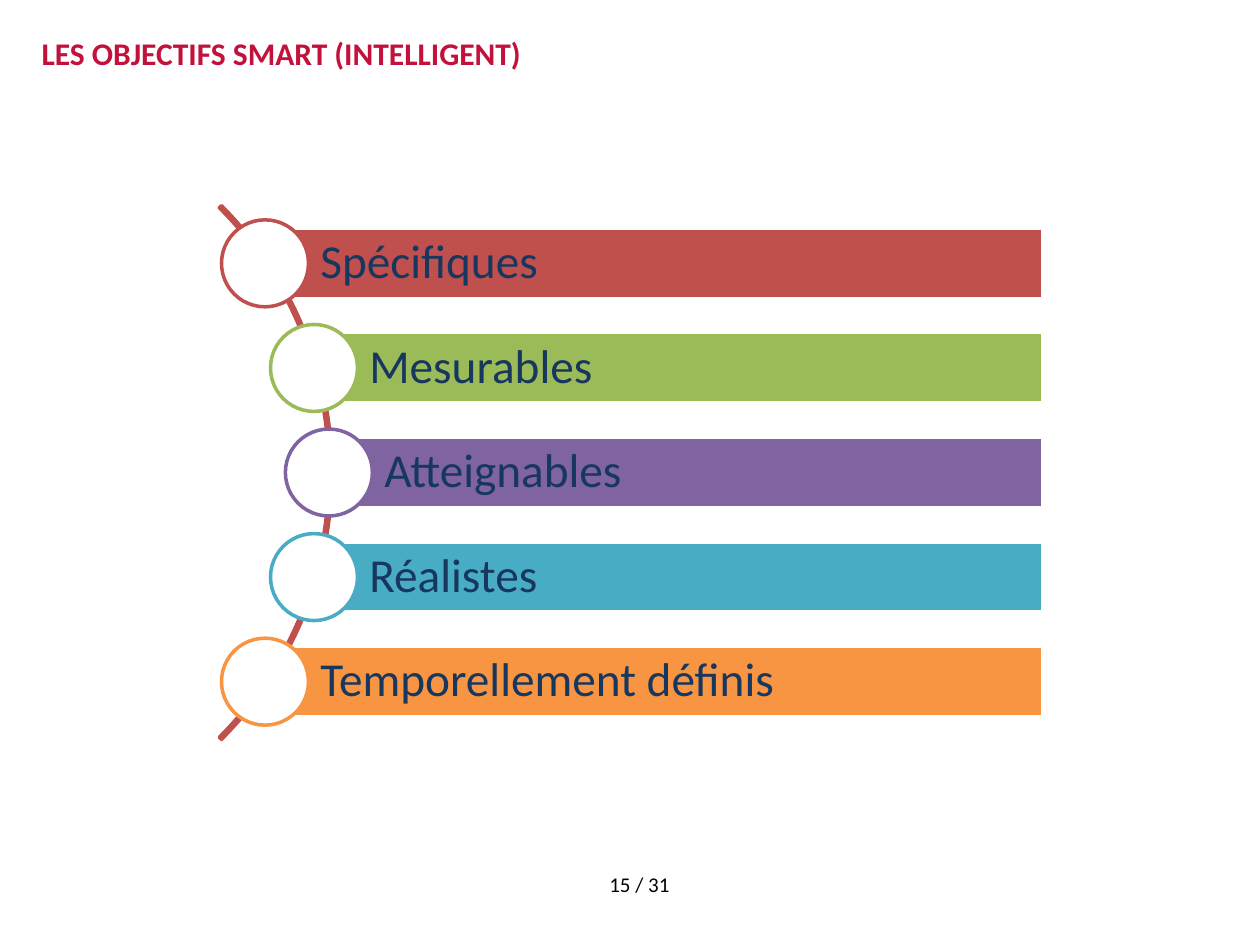
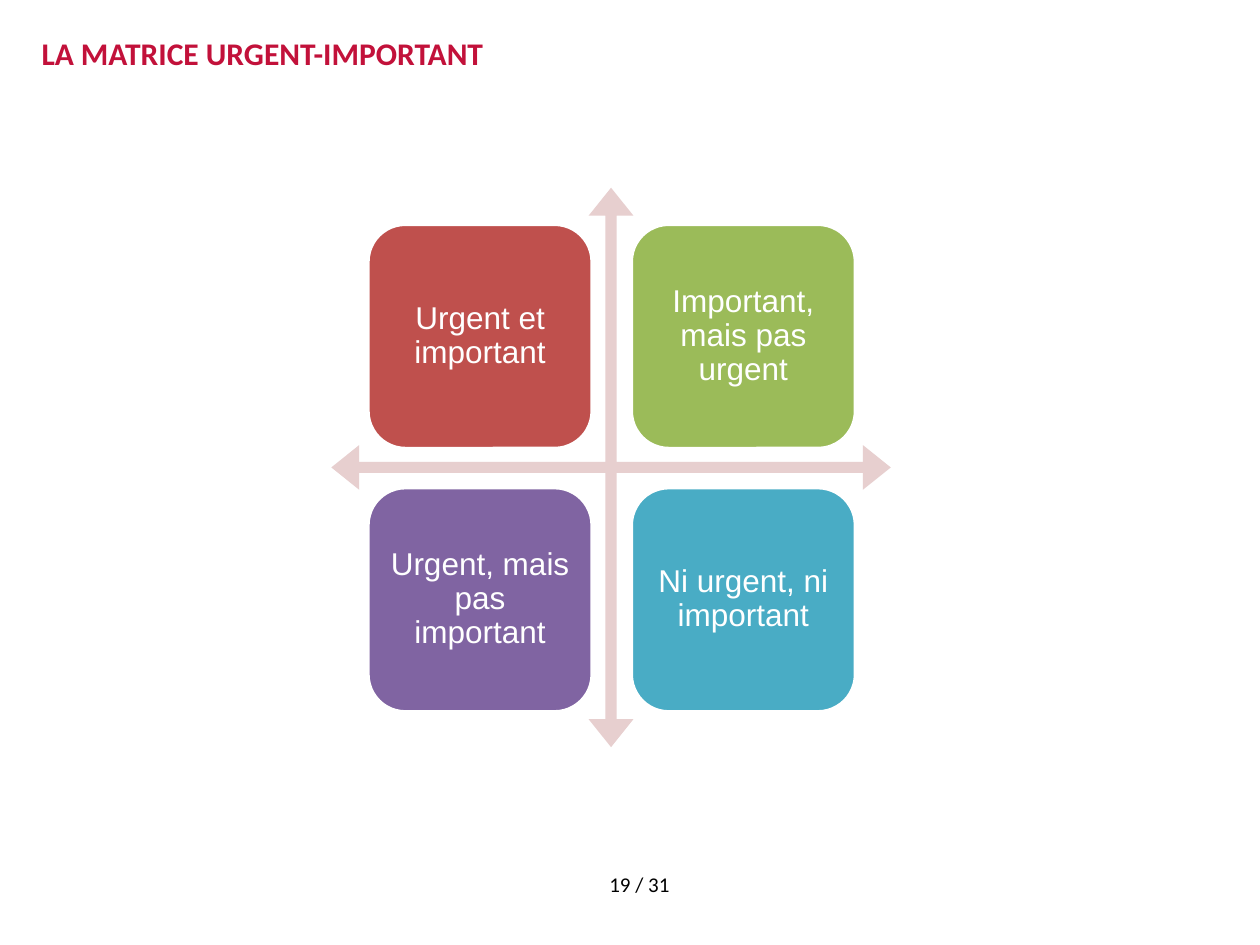
from dataclasses import dataclass
from itertools import product
from math import sqrt

from pptx import Presentation
from pptx import util as u
from pptx.dml.color import RGBColor
from pptx.enum import shapes, text

# Content
PAGE_COUNT = 31
SMART = {
    "title": "LES OBJECTIFS SMART (INTELLIGENT)",
    "page": 15,
    "goals": ["Spécifiques", "Mesurables", "Atteignables", "Réalistes",
              "Temporellement définis"],
}
MATRIX = {
    "title": "LA MATRICE URGENT-IMPORTANT",
    "page": 19,
    "quadrants": ["Urgent et important", "Important, mais pas urgent",
                  "Urgent, mais pas important", "Ni urgent, ni important"],
}


@dataclass(frozen=True)
class Theme:
    accents: tuple = ("BF504D", "9BBB59", "8064A2", "49ACC5", "F79543")
    white: str = "FFFFFF"
    black: str = "000000"
    title: str = "C2113A"
    navy: str = "17375E"
    pale: str = "E7CFCF"
    font: str = "Calibri"
    matrix_font: str = "Arial"
    title_size: int = 18
    goal_size: int = 27
    quadrant_size: int = 18
    page_size: int = 12
    line_width: int = 2


THEME = Theme()
KIND = shapes.MSO_SHAPE
ALIGN = text.PP_ALIGN
ANCHOR = text.MSO_ANCHOR


# Helpers
def add_part(page, kind, left, top, width, height, fill=None, line=None, adjust=()):
    """Add a flat preset shape; without a colour it has no fill or line."""
    part = page.shapes.add_shape(kind, *map(u.Inches, (left, top, width, height)))
    part.shadow.inherit = False
    for index, value in enumerate(adjust):
        part.adjustments[index] = value
    if fill:
        part.fill.solid()
        part.fill.fore_color.rgb = RGBColor.from_string(fill)
    else:
        part.fill.background()
    if line:
        part.line.color.rgb = RGBColor.from_string(line)
        part.line.width = u.Pt(THEME.line_width)
    else:
        part.line.fill.background()
    return part


def write(box, words, size, color, font=THEME.font, align=ALIGN.LEFT, bold=False,
          anchor=ANCHOR.MIDDLE, insets=(0.07, 0.07, 0.07, 0.07), spacing=0.9):
    frame = box.text_frame
    frame.word_wrap = True
    frame.vertical_anchor = anchor
    (frame.margin_left, frame.margin_top,
     frame.margin_right, frame.margin_bottom) = map(u.Inches, insets)
    paragraph = frame.paragraphs[0]
    paragraph.text = words
    paragraph.alignment = align
    paragraph.line_spacing = spacing
    paragraph.font.name = font
    paragraph.font.size = u.Pt(size)
    paragraph.font.bold = bold
    paragraph.font.color.rgb = RGBColor.from_string(color)


def add_page(deck, content):
    """Add a blank page with the shared title and page number."""
    page = deck.slides.add_slide(deck.slide_layouts[6])
    title = add_part(page, KIND.RECTANGLE, 0.33, 0.29, 9.33, 0.76, THEME.white)
    write(title, content["title"], THEME.title_size, THEME.title, bold=True,
          align=ALIGN.JUSTIFY, anchor=ANCHOR.TOP, insets=(0, 0, 0, 0),
          spacing=u.Pt(20))
    title.text_frame.paragraphs[0].space_after = u.Pt(12)
    number = page.shapes.add_textbox(*map(u.Inches, (4.38, 6.87, 1.39, 0.31)))
    write(number, f"{content['page']} / {PAGE_COUNT}", THEME.page_size, THEME.black,
          align=ALIGN.CENTER, anchor=ANCHOR.TOP, insets=(0.1, 0.05, 0.1, 0.05),
          spacing=1.0)
    return page


# Goals: bars start at circles that sit along an arc
def build_smart(deck):
    page = add_page(deck, SMART)
    arc_x, arc_y, arc_size, radius = -0.36, 3.75, 5.99, 2.97
    pitch, bar_right, bar_height, circle = 0.83, 8.28, 0.56, 0.69
    add_part(page, KIND.BLOCK_ARC, arc_x - arc_size / 2, arc_y - arc_size / 2,
             arc_size, arc_size, line=THEME.accents[0], adjust=(189, 27, 0.004))
    middle = (len(SMART["goals"]) - 1) / 2
    for index, (goal, color) in enumerate(zip(SMART["goals"], THEME.accents)):
        rise = (index - middle) * pitch
        x, y = arc_x + sqrt(radius ** 2 - rise ** 2), arc_y + rise
        bar = add_part(page, KIND.RECTANGLE, x, y - bar_height / 2,
                       bar_right - x, bar_height, color, THEME.white)
        write(bar, goal, THEME.goal_size, THEME.navy, insets=(0.44, 0.07, 0.07, 0.07))
        add_part(page, KIND.OVAL, x - circle / 2, y - circle / 2, circle, circle,
                 THEME.white, color)


# Matrix: four tiles around a crossed arrow
def build_matrix(deck):
    page = add_page(deck, MATRIX)
    left, top, size = 2.63, 1.49, 4.44
    margin, tile_size, pitch = 0.29, 1.78, 2.09
    add_part(page, KIND.QUAD_ARROW, left, top, size, size, THEME.pale,
             adjust=(0.02, 0.04, 0.05))
    cells = product(range(2), repeat=2)
    for (row, column), words, color in zip(cells, MATRIX["quadrants"], THEME.accents):
        tile = add_part(page, KIND.ROUNDED_RECTANGLE, left + margin + column * pitch,
                        top + margin + row * pitch, tile_size, tile_size,
                        color, THEME.white, adjust=(0.167,))
        write(tile, words, THEME.quadrant_size, THEME.white, THEME.matrix_font,
              ALIGN.CENTER)


def main():
    deck = Presentation()
    deck.slide_width, deck.slide_height = u.Inches(10), u.Inches(7.5)
    build_smart(deck)
    build_matrix(deck)
    deck.save("out.pptx")


if __name__ == "__main__":
    main()
